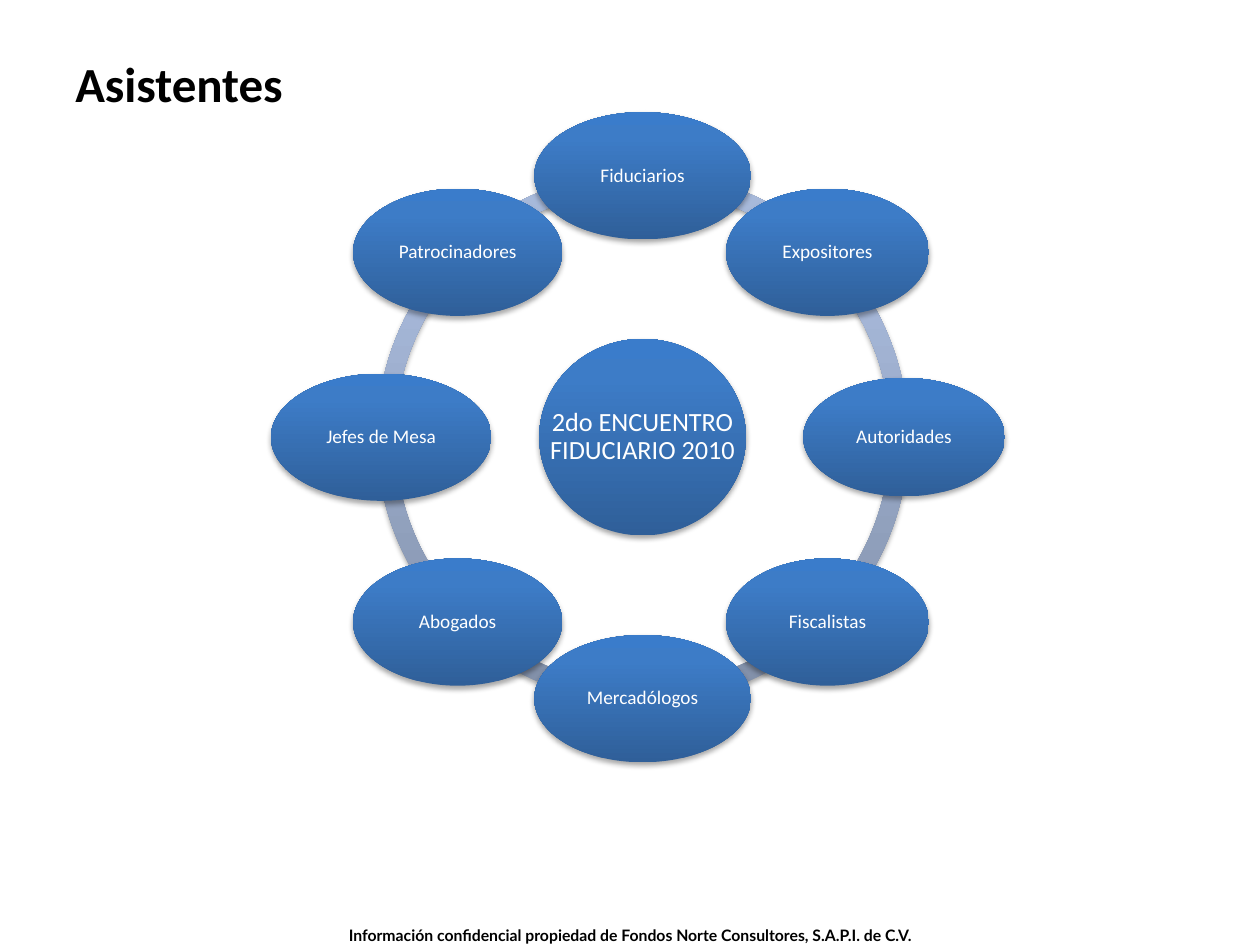
from dataclasses import dataclass
from math import cos, radians, sin

from lxml.etree import fromstring
from pptx import Presentation
from pptx.dml.color import RGBColor
from pptx.enum.shapes import MSO_SHAPE
from pptx.enum.text import MSO_ANCHOR, PP_ALIGN
from pptx.oxml.ns import nsdecls
from pptx.util import Inches, Pt


@dataclass(frozen=True)
class Theme:
    ink: str = "000000"
    light: str = "FFFFFF"
    node: tuple = ((0, "2F5F99"), (80, "3D7CC7"), (100, "3A7CCB"))
    ring: tuple = ((0, "818FA8"), (80, "A7B9DA"), (100, "A7BADC"))
    font: str = "Calibri"
    foot_font: str = "Lato"
    title: int = 28
    hub: int = 15
    label: int = 11
    foot: int = 9


THEME = Theme()
WIDTH, HEIGHT = Inches(10), Inches(7.5)
COLS, ROWS = 100, 75
HUB = (51, 34.7)
ORBIT = 20.75
RING = 42.2
BAND = 0.034
TURN = 216
GUESTS = (
    ("Fiduciarios", 17.2, 10.1),
    ("Expositores", 16.1, 10.1),
    ("Autoridades", 16, 9.4),
    ("Fiscalistas", 16.1, 10.1),
    ("Mercadólogos", 17.2, 10.1),
    ("Abogados", 16.6, 10.1),
    ("Jefes de Mesa", 17.5, 10.1),
    ("Patrocinadores", 16.6, 10.1),
)


def place(left, top, wide, high):
    return (round(left * WIDTH / COLS), round(top * HEIGHT / ROWS),
            round(wide * WIDTH / COLS), round(high * HEIGHT / ROWS))


def around(mid, wide, high):
    return mid[0] - wide / 2, mid[1] - high / 2, wide, high


def apply(item, style):
    for key, value in style.items():
        setattr(item, key, value)


def shade(shape, stops):
    marks = "".join(
        f'<a:gs pos="{spot * 1000}"><a:srgbClr val="{tone}"/></a:gs>'
        for spot, tone in stops)
    props = shape._element.spPr
    props.append(fromstring(
        f'<a:gradFill {nsdecls("a")} rotWithShape="1"><a:gsLst>{marks}</a:gsLst>'
        '<a:lin ang="16200000" scaled="0"/></a:gradFill>'))
    shape.line.fill.background()
    props.append(fromstring(
        f'<a:effectLst {nsdecls("a")}><a:outerShdw blurRad="{Pt(3.1)}" '
        f'dist="{Pt(1.8)}" dir="5400000" rotWithShape="0">'
        f'<a:srgbClr val="{THEME.ink}"><a:alpha val="35000"/></a:srgbClr>'
        '</a:outerShdw></a:effectLst>'))


def write(slide, box, words, size, tone, face=THEME.font, bold=False,
          frame={}, para={}):
    text = slide.shapes.add_textbox(*place(*box)).text_frame
    apply(text, {"word_wrap": True, "vertical_anchor": MSO_ANCHOR.MIDDLE, **frame})
    line = text.paragraphs[0]
    apply(line, {"text": words, **para})
    apply(line.font, {"size": Pt(size), "name": face, "bold": bold})
    line.font.color.rgb = RGBColor.from_string(tone)


def draw_ring(slide):
    step = TURN // len(GUESTS)
    for count in range(len(GUESTS)):
        start = (135 - step * count) % TURN
        arc = slide.shapes.add_shape(
            MSO_SHAPE.BLOCK_ARC, *place(*around(HUB, RING, RING)))
        for index, value in enumerate((start, (start + step) % TURN, BAND)):
            arc.adjustments[index] = value
        shade(arc, THEME.ring)


def draw_node(slide, mid, wide, high, words, size):
    box = around(mid, wide, high)
    shade(slide.shapes.add_shape(MSO_SHAPE.OVAL, *place(*box)), THEME.node)
    sides = ("left", "right", "top", "bottom")
    write(slide, box, words, size, THEME.light,
          frame={f"margin_{side}": Inches(0.02) for side in sides},
          para={"alignment": PP_ALIGN.CENTER, "line_spacing": 0.9})


def main():
    deck = Presentation()
    apply(deck, {"slide_width": WIDTH, "slide_height": HEIGHT})
    slide = deck.slides.add_slide(deck.slide_layouts[6])
    write(slide, (15.4, 73, 69.2, 2.5),
          "Información confidencial propiedad de Fondos Norte Consultores, S.A.P.I. de C.V.",
          THEME.foot, THEME.ink, THEME.foot_font, True,
          para={"alignment": PP_ALIGN.CENTER})
    write(slide, (5, 3, 90, 7.2), "Asistentes", THEME.title, THEME.ink, bold=True)
    draw_ring(slide)
    draw_node(slide, HUB, 16.4, 15.6, "2do ENCUENTRO FIDUCIARIO 2010", THEME.hub)
    for index, (name, wide, high) in enumerate(GUESTS):
        angle = radians(360 * index / len(GUESTS))
        mid = HUB[0] + ORBIT * sin(angle), HUB[1] - ORBIT * cos(angle)
        draw_node(slide, mid, wide, high, name, THEME.label)
    deck.save("out.pptx")


if __name__ == "__main__":
    main()
